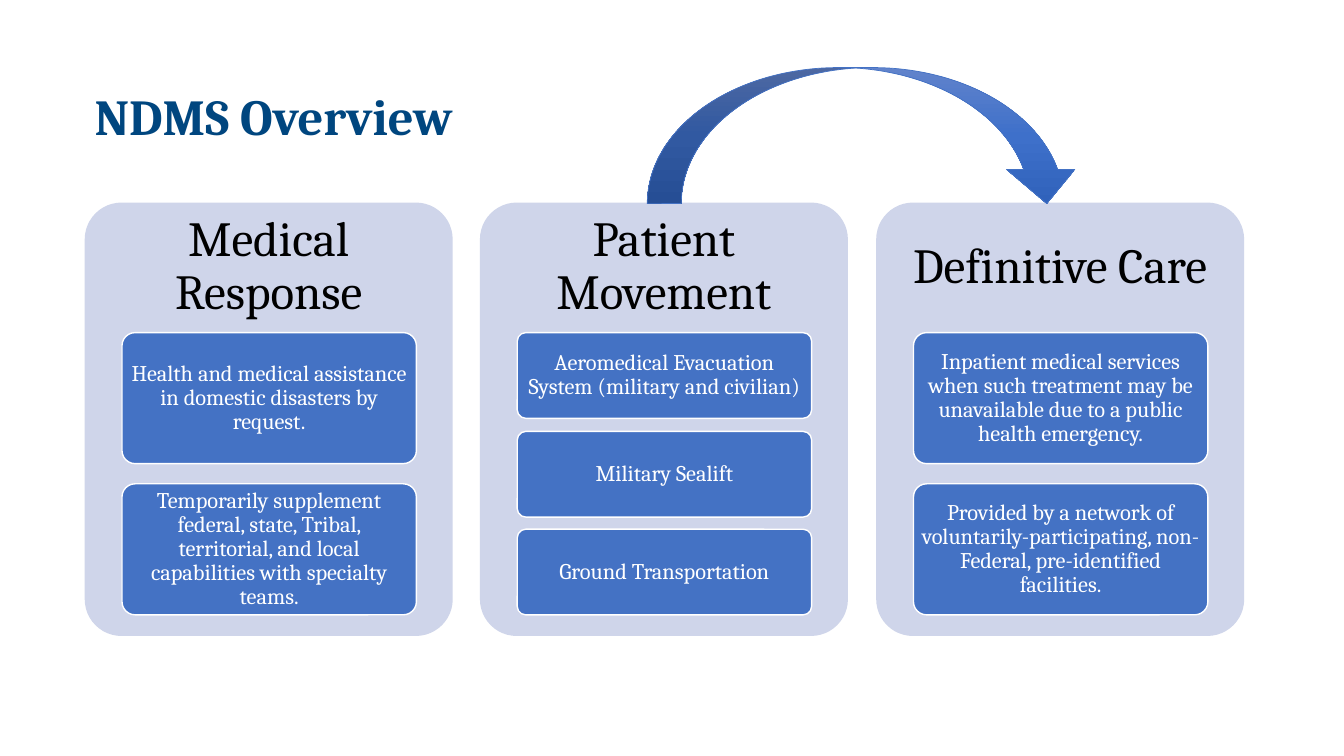
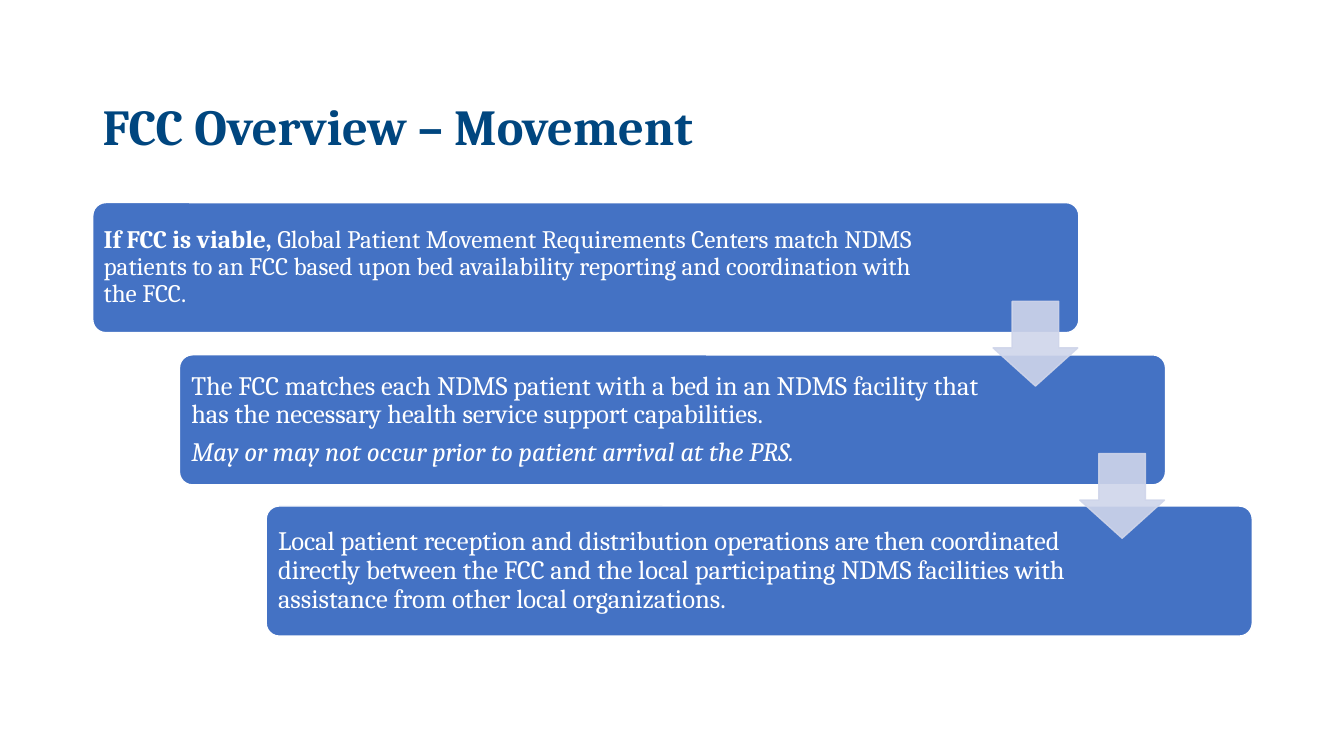
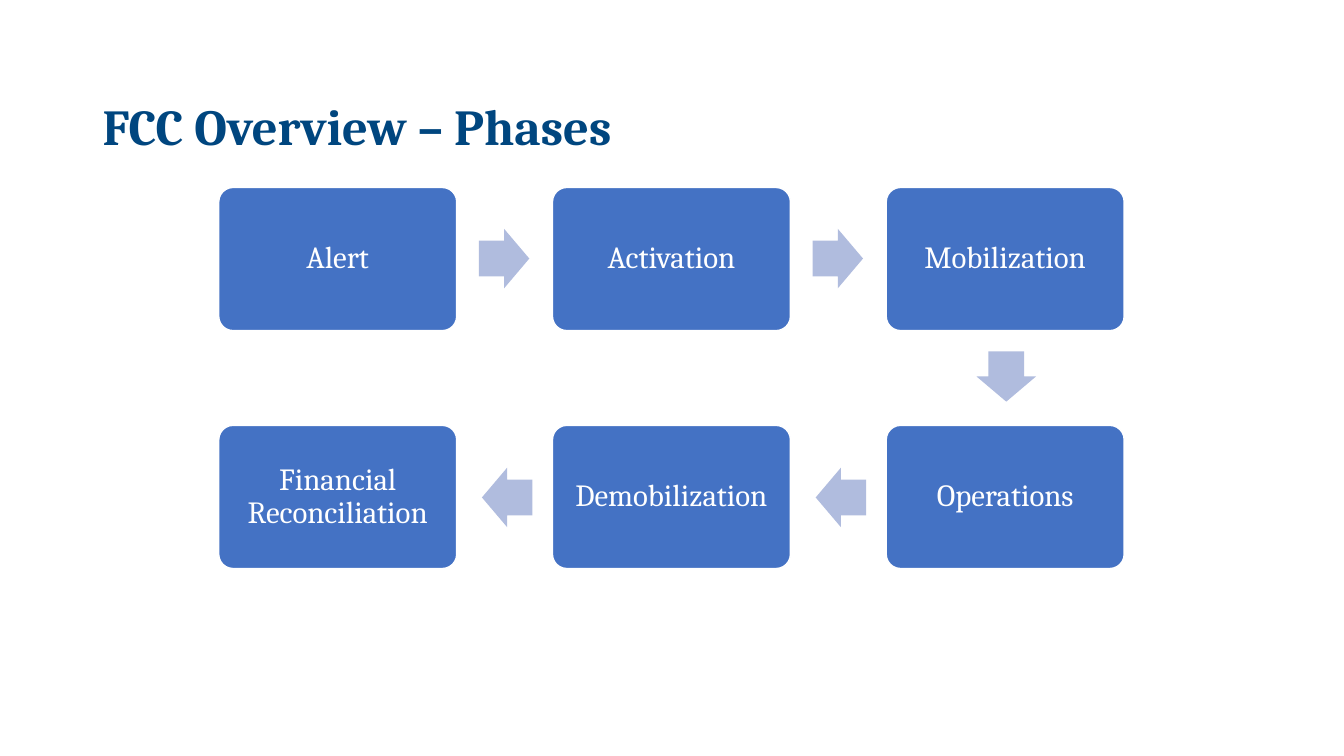
from copy import deepcopy
from dataclasses import dataclass
from typing import NamedTuple

from pptx import Presentation, util as u
from pptx.dml.color import RGBColor
from pptx.enum import shapes, text
from pptx.oxml import ns
from lxml import etree

PX = 9144  # EMU, a hundredth of an inch
FACE = "Cambria"
WHITE = RGBColor(0xFF, 0xFF, 0xFF)
BLACK = RGBColor(0x00, 0x00, 0x00)
NAVY = RGBColor(0x00, 0x46, 0x7F)
BLUE = RGBColor(0x44, 0x72, 0xC4)
PALE = RGBColor(0xCF, 0xD5, 0xEA)
LILAC = RGBColor(0xB0, 0xBC, 0xDE)
SWEEP = (RGBColor(0x61, 0x83, 0xCB), RGBColor(0x3E, 0x70, 0xCA), RGBColor(0x30, 0x62, 0xBB))
KIND = shapes.MSO_SHAPE
LEFT, MID = text.PP_ALIGN.LEFT, text.PP_ALIGN.CENTER


class Box(NamedTuple):
    x: int
    y: int
    w: int
    h: int


class Inset(NamedTuple):
    left: int
    top: int
    right: int
    foot: int


class Run(NamedTuple):
    words: str
    bold: bool = False
    slant: bool = False


@dataclass(frozen=True)
class Style:
    size: int
    colour: RGBColor = WHITE
    align: int = MID
    bold: bool = False
    inset: Inset = Inset(4, 3, 4, 3)


@dataclass(frozen=True)
class Panel:
    head: str
    cards: tuple[str, ...]


@dataclass(frozen=True)
class Step:
    paras: tuple[tuple[Run, ...], ...]
    style: Style


@dataclass(frozen=True)
class Phase:
    name: str
    col: int
    row: int
    turn: int | None = None


TITLE = Style(36, NAVY, LEFT, True, Inset(10, 5, 10, 5))
HEAD = Style(35, BLACK, inset=Inset(4, 4, 4, 305))
CARD = Style(16)
FIRST = Style(18, align=LEFT, inset=Inset(7, 7, 140, 7))
NEXT = Style(19, align=LEFT, inset=Inset(8, 8, 178, 8))
PHASE = Style(22, inset=Inset(9, 9, 9, 9))

PANELS = (
    Panel("Medical Response", (
        "Health and medical assistance in domestic disasters by request.",
        "Temporarily supplement federal, state, Tribal, territorial, and local "
        "capabilities with specialty teams.")),
    Panel("Patient Movement", (
        "Aeromedical Evacuation System (military and civilian)",
        "Military Sealift",
        "Ground Transportation")),
    Panel("Definitive Care", (
        "Inpatient medical services when such treatment may be unavailable due to "
        "a public health emergency.",
        "Provided by a network of voluntarily-participating, non-Federal, "
        "pre-identified facilities.")),
)
STEPS = (
    Step(((Run("If FCC is viable, ", bold=True),
           Run("Global Patient Movement Requirements Centers match NDMS patients to an FCC "
               "based upon bed availability reporting and coordination with the FCC.")),), FIRST),
    Step(((Run("The FCC matches each NDMS patient with a bed in an NDMS facility that has the "
               "necessary health service support capabilities."),),
          (Run("May or may not occur prior to patient arrival at the PRS.", slant=True),)), NEXT),
    Step(((Run("Local patient reception and distribution operations are then coordinated directly "
               "between the FCC and the local participating NDMS facilities with assistance from "
               "other local organizations."),),), NEXT),
)
PHASES = (
    Phase("Alert", 0, 0, 0),
    Phase("Activation", 1, 0, 0),
    Phase("Mobilization", 2, 0, 90),
    Phase("Operations", 2, 1, 180),
    Phase("Demobilization", 1, 1, 180),
    Phase("Financial Reconciliation", 0, 1),
)
# Place of the arrow from the corner of its phase, by turn
SHIFT = {0: (258, 41), 90: (94, 158), 180: (-70, 42)}


def emu(box: Box) -> list[int]:
    return [n * PX for n in box]


def spread(start: int, end: int, size: int, count: int) -> list[int]:
    """Places of equal items that fill start to end with equal gaps."""
    pitch = (end - start - size) / (count - 1)
    return [round(start + pitch * i) for i in range(count)]


def plain(words: str) -> tuple[tuple[Run, ...], ...]:
    return ((Run(words),),)


def write(frame, paras: tuple[tuple[Run, ...], ...], style: Style) -> None:
    frame.word_wrap = True
    frame.vertical_anchor = text.MSO_ANCHOR.MIDDLE
    inset = style.inset
    frame.margin_left, frame.margin_top = inset.left * PX, inset.top * PX
    frame.margin_right, frame.margin_bottom = inset.right * PX, inset.foot * PX
    for i, runs in enumerate(paras):
        para = frame.add_paragraph() if i else frame.paragraphs[0]
        para.alignment = style.align
        para.line_spacing = 0.9
        if i:
            para.space_before = u.Pt(6.5)
        font = para.font
        font.name, font.size, font.bold = FACE, u.Pt(style.size), style.bold
        font.color.rgb = style.colour
        for item in runs:
            run = para.add_run()
            run.text = item.words
            if item.bold:
                run.font.bold = True
            if item.slant:
                run.font.italic = True


def draw(slide, kind: int, box: Box, fill: RGBColor | None, line: RGBColor | None = None,
         width: float = 1, adjust: tuple[float, ...] = ()):
    shape = slide.shapes.add_shape(kind, *emu(box))
    shape.shadow.inherit = False
    if fill is not None:
        shape.fill.solid()
        shape.fill.fore_color.rgb = fill
    if line is None:
        shape.line.fill.background()
    else:
        shape.line.color.rgb = line
        shape.line.width = u.Pt(width)
    for i, value in enumerate(adjust):
        shape.adjustments[i] = value
    return shape


def tile(slide, box: Box, paras: tuple[tuple[Run, ...], ...], style: Style,
         fill: RGBColor = BLUE, line: RGBColor | None = WHITE) -> None:
    """A rounded box with text."""
    shape = draw(slide, KIND.ROUNDED_RECTANGLE, box, fill, line, adjust=(0.1,))
    write(shape.text_frame, paras, style)


def fade(shape, share: int) -> None:
    """Make fill and line opaque to a share in percent."""
    for tint in list(shape._element.spPr.iter(ns.qn("a:srgbClr"))):
        etree.SubElement(tint, ns.qn("a:alpha")).set("val", str(share * 1000))


def blend(shape, tints: tuple[RGBColor, ...]) -> None:
    """Fill from top to bottom with evenly placed tints."""
    shape.fill.gradient()
    shape.fill.gradient_angle = 270
    stops = shape._element.spPr.find(".//" + ns.qn("a:gsLst"))
    while len(stops) < len(tints):
        stops.append(deepcopy(stops[-1]))
    for i, stop in enumerate(shape.fill.gradient_stops):
        stop.color.rgb = tints[i]
        stop.position = i / (len(tints) - 1)


def start(deck, title: str, box: Box = Box(92, 71, 1150, 115)):
    """Add a slide with its title."""
    slide = deck.slides.add_slide(deck.slide_layouts[6])
    write(slide.shapes.add_textbox(*emu(box)).text_frame, plain(title), TITLE)
    return slide


def system(deck) -> None:
    slide = start(deck, "NDMS Overview", Box(84, 51, 1150, 135))
    for x, panel in zip(spread(84, 1234, 365, len(PANELS)), PANELS):
        tile(slide, Box(x, 201, 365, 430), plain(panel.head), HEAD, PALE, None)
        count = len(panel.cards)
        high = round(280 / (count + (count - 1) * 0.154))
        for y, card in zip(spread(330, 610, high, count), panel.cards):
            tile(slide, Box(x + 37, y, 292, high), plain(card), CARD)
    arc = draw(slide, KIND.CURVED_DOWN_ARROW, Box(642, 67, 430, 135), None, BLUE, 0.5)
    blend(arc, SWEEP)


def moves(deck) -> None:
    slide = start(deck, "FCC Overview – Movement")
    count = len(STEPS)
    spots = list(zip(spread(92, 1242, 978, count), spread(201, 631, 129, count)))
    for (x, y), step in zip(spots, STEPS):
        tile(slide, Box(x, y, 978, 129), step.paras, step.style)
    for x, y in spots[:-1]:
        arrow = draw(slide, KIND.DOWN_ARROW, Box(x + 893, y + 98, 84, 84), PALE, PALE,
                     adjust=(0.55, 0.45))
        fade(arrow, 90)


def phases(deck) -> None:
    slide = start(deck, "FCC Overview – Phases")
    cols, rows = spread(217, 1115, 236, 3), spread(186, 564, 142, 2)
    for phase in PHASES:
        x, y = cols[phase.col], rows[phase.row]
        tile(slide, Box(x, y, 236, 142), plain(phase.name), PHASE)
        if phase.turn is not None:
            right, down = SHIFT[phase.turn]
            arrow = draw(slide, KIND.RIGHT_ARROW, Box(x + right, y + down, 50, 59), LILAC,
                         adjust=(0.6, 0.5))
            arrow.rotation = phase.turn


def main() -> None:
    deck = Presentation()
    deck.slide_width, deck.slide_height = 1333 * PX, 750 * PX
    system(deck)
    moves(deck)
    phases(deck)
    deck.save("out.pptx")


if __name__ == "__main__":
    main()
